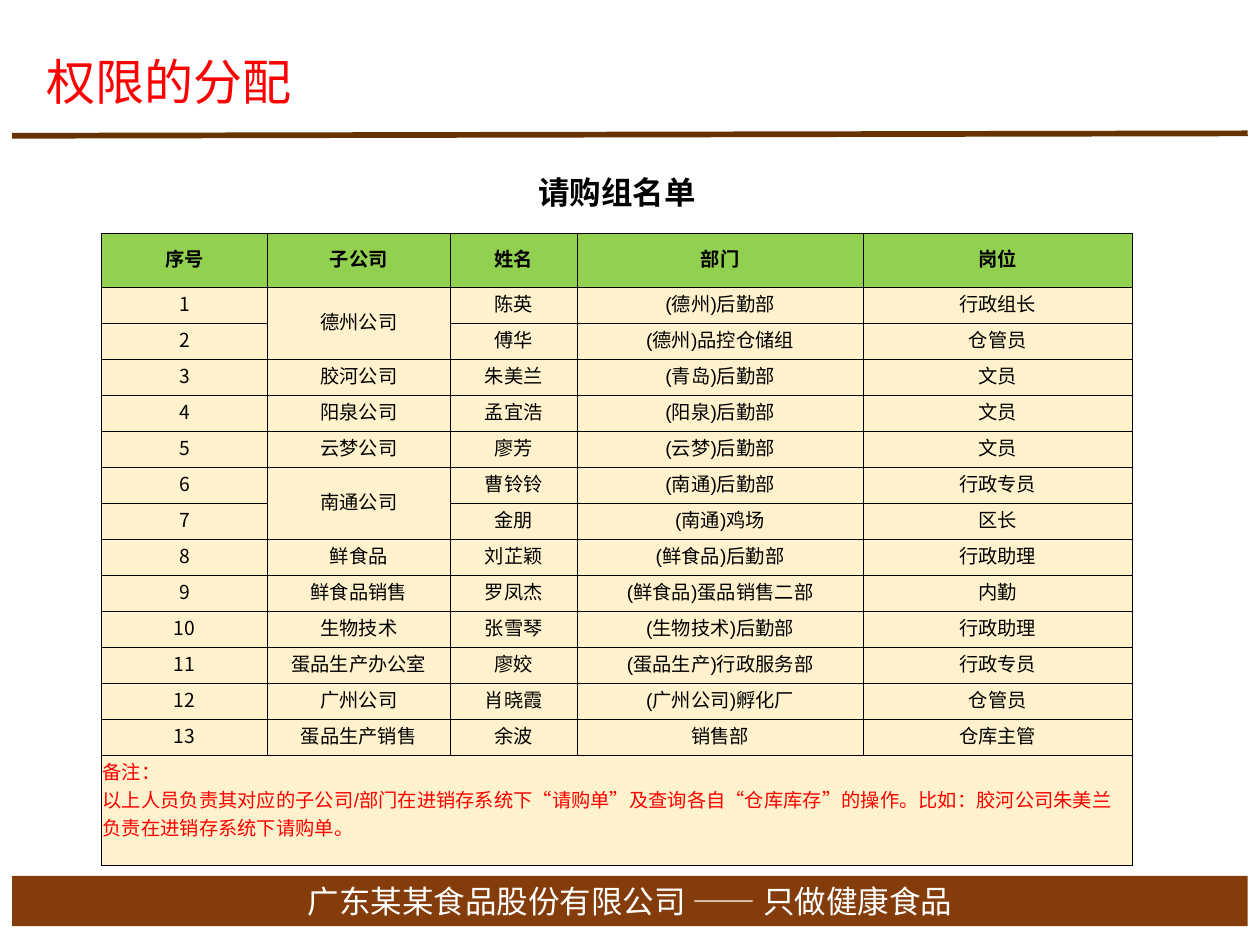
from dataclasses import dataclass

from lxml import etree
from pptx import Presentation
from pptx.dml.color import RGBColor
from pptx.enum.shapes import MSO_CONNECTOR, MSO_SHAPE
from pptx.enum.text import MSO_ANCHOR, MSO_AUTO_SIZE, PP_ALIGN
from pptx.oxml.ns import qn
from pptx.util import Pt

CENTER, LEFT = PP_ALIGN.CENTER, PP_ALIGN.LEFT
MIDDLE, TOP = MSO_ANCHOR.MIDDLE, MSO_ANCHOR.TOP
RECTANGLE, STRAIGHT = MSO_SHAPE.RECTANGLE, MSO_CONNECTOR.STRAIGHT
NO_AUTOSIZE = MSO_AUTO_SIZE.NONE
CJK, LATIN = "Noto Sans CJK SC", "Arial"
COLORS = {
    "red": "FF0000",
    "black": "000000",
    "white": "FFFFFF",
    "rule": "663300",
    "footer": "843C0B",
    "header": "92D050",
    "body": "FFF2CC",
}


@dataclass
class Requester:
    company: str
    person: str
    department: str
    post: str
    company_rows: int = 1


HEADINGS = ["序号", "子公司", "姓名", "部门", "岗位"]
REQUESTERS = [
    Requester("德州公司", "陈英", "(德州)后勤部", "行政组长", 2),
    Requester("", "傅华", "(德州)品控仓储组", "仓管员"),
    Requester("胶河公司", "朱美兰", "(青岛)后勤部", "文员"),
    Requester("阳泉公司", "孟宜浩", "(阳泉)后勤部", "文员"),
    Requester("云梦公司", "廖芳", "(云梦)后勤部", "文员"),
    Requester("南通公司", "曹铃铃", "(南通)后勤部", "行政专员", 2),
    Requester("", "金朋", "(南通)鸡场", "区长"),
    Requester("鲜食品", "刘芷颖", "(鲜食品)后勤部", "行政助理"),
    Requester("鲜食品销售", "罗凤杰", "(鲜食品)蛋品销售二部", "内勤"),
    Requester("生物技术", "张雪琴", "(生物技术)后勤部", "行政助理"),
    Requester("蛋品生产办公室", "廖姣", "(蛋品生产)行政服务部", "行政专员"),
    Requester("广州公司", "肖晓霞", "(广州公司)孵化厂", "仓管员"),
    Requester("蛋品生产销售", "余波", "销售部", "仓库主管"),
]
NOTE = (
    "备注：\n"
    "以上人员负责其对应的子公司/部门在进销存系统下“请购单”及查询各自“仓库库存”的操作。"
    "比如：胶河公司朱美兰负责在进销存系统下请购单。"
)
COLUMN_WIDTHS = [94.9, 104.5, 72.6, 163.3, 154]
ROW_HEIGHTS = [45.5, 31] + [20.6] * len(REQUESTERS) + [62.6]


def rgb(name: str) -> RGBColor:
    return RGBColor.from_string(COLORS[name])


def write(frame, text: str, *, size: float, color: str = "black", font: str = LATIN,
          bold: bool = False, align=CENTER) -> None:
    frame.word_wrap = True
    frame.text = text
    for paragraph in frame.paragraphs:
        paragraph.alignment = align
        for run in paragraph.runs:
            run.font.name, run.font.size, run.font.bold = font, Pt(size), bold
            run.font.color.rgb = rgb(color)
            etree.SubElement(run.font._element, qn("a:ea"), typeface=CJK)


def set_borders(cell, visible: str) -> None:
    properties = cell._tc.get_or_add_tcPr()
    for side in "LRTB":
        edge = etree.SubElement(properties, qn(f"a:ln{side}"), w=str(Pt(0.5)))
        if side in visible:
            fill = etree.SubElement(edge, qn("a:solidFill"))
            etree.SubElement(fill, qn("a:srgbClr"), val=COLORS["black"])
        else:
            etree.SubElement(edge, qn("a:noFill"))


def add_title(slide) -> None:
    title = slide.shapes.title
    title.left, title.top, title.width, title.height = Pt(19.4), Pt(26), Pt(404), Pt(41)
    write(title.text_frame, "权限的分配", size=28, color="red", font=CJK, align=LEFT)
    title.text_frame.auto_size = NO_AUTOSIZE
    title.text_frame.vertical_anchor = MIDDLE


def add_rule(slide) -> None:
    rule = slide.shapes.add_connector(STRAIGHT, Pt(7), Pt(77.6), Pt(713), Pt(76.2))
    rule.line.color.rgb = rgb("rule")
    rule.line.width = Pt(3.25)
    etree.SubElement(rule._element.spPr, qn("a:effectLst"))


def add_footer(slide) -> None:
    footer = slide.shapes.add_shape(RECTANGLE, Pt(7), Pt(500.5), Pt(706), Pt(28.8))
    footer.shadow.inherit = False
    footer.fill.solid()
    footer.fill.fore_color.rgb = rgb("footer")
    footer.line.fill.background()
    write(footer.text_frame, "广东某某食品股份有限公司 —— 只做健康食品",
          size=18, color="white", font=CJK)
    footer.text_frame.vertical_anchor = MIDDLE


def add_roster(slide) -> None:
    roster = slide.shapes.add_table(
        len(ROW_HEIGHTS), len(HEADINGS), Pt(57.9), Pt(87.8),
        Pt(sum(COLUMN_WIDTHS)), Pt(sum(ROW_HEIGHTS))).table
    roster.first_row = roster.horz_banding = False
    for column, width in zip(roster.columns, COLUMN_WIDTHS):
        column.width = Pt(width)
    last_row, last_column = len(ROW_HEIGHTS) - 1, len(HEADINGS) - 1
    for index, (row, height) in enumerate(zip(roster.rows, ROW_HEIGHTS)):
        row.height = Pt(height)
        for cell in row.cells:
            cell.margin_left = cell.margin_right = cell.margin_top = Pt(0.75)
            cell.margin_bottom = Pt(3.6)
            cell.vertical_anchor = TOP if index == last_row else MIDDLE
            set_borders(cell, "LRTB" if index else "B")
            if index:
                cell.fill.solid()
                cell.fill.fore_color.rgb = rgb("header" if index == 1 else "body")
            else:
                cell.fill.background()

    for index in (0, last_row):
        roster.cell(index, 0).merge(roster.cell(index, last_column))
    write(roster.cell(0, 0).text_frame, "请购组名单", size=18, bold=True)
    for column, heading in enumerate(HEADINGS):
        write(roster.cell(1, column).text_frame, heading, size=11, bold=True)
    for number, requester in enumerate(REQUESTERS, 1):
        row = number + 1
        if requester.company_rows > 1:
            roster.cell(row, 1).merge(roster.cell(row + requester.company_rows - 1, 1))
        values = [str(number), requester.company, requester.person,
                  requester.department, requester.post]
        for column, value in enumerate(values):
            write(roster.cell(row, column).text_frame, value, size=11,
                  font=LATIN if column else CJK)
    write(roster.cell(last_row, 0).text_frame, NOTE, size=11, color="red", align=LEFT)


def main() -> None:
    deck = Presentation()
    deck.slide_width, deck.slide_height = Pt(720), Pt(540)
    slide = deck.slides.add_slide(deck.slide_layouts[5])
    add_footer(slide)
    add_rule(slide)
    add_title(slide)
    add_roster(slide)
    deck.save("out.pptx")


if __name__ == "__main__":
    main()
